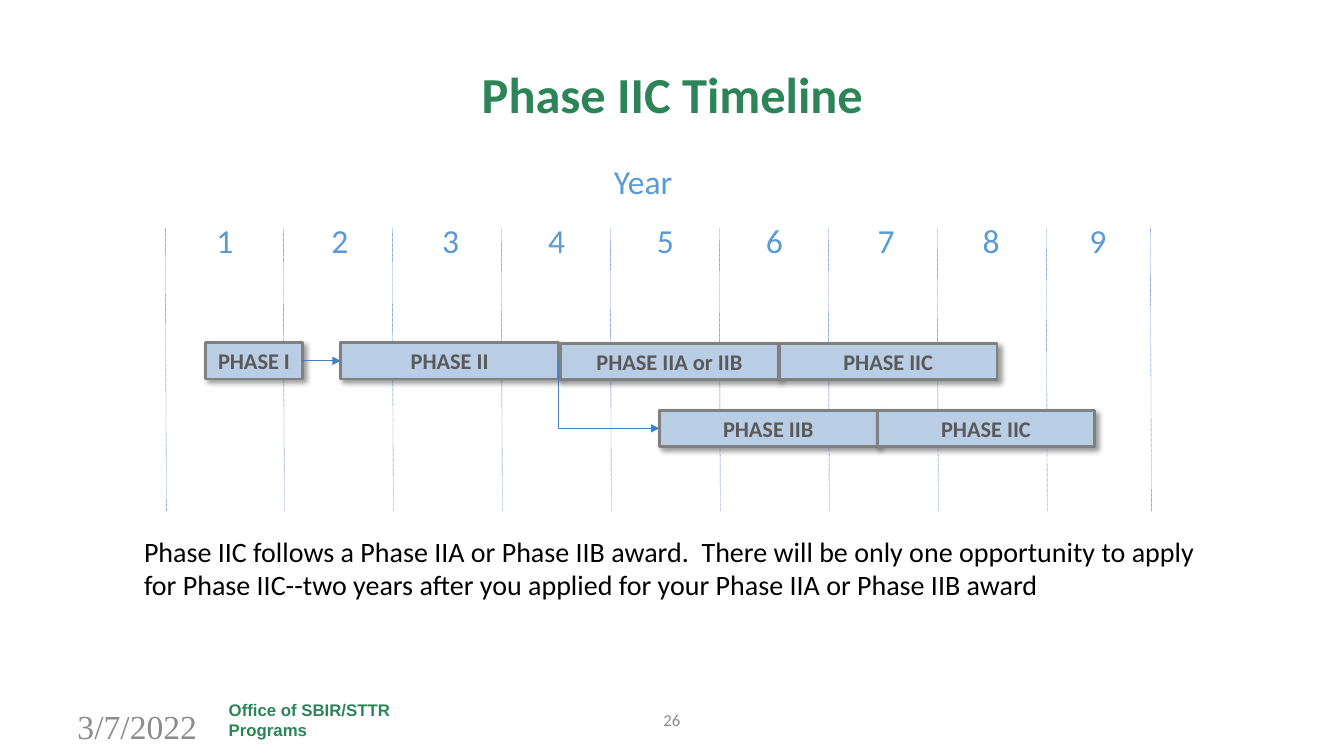
from lxml import etree
from pptx import Presentation
from pptx.dml.color import RGBColor
from pptx.enum import dml, shapes, text
from pptx.oxml import ns, parse_xml
from pptx.util import Inches, Pt

COLORS = {
    "green": "2C8458", "year": "5B9BD5", "line": "4B7EBC", "bar": "B9CDE5",
    "border": "808080", "label": "595959", "footer": "8C8C8C",
    "black": "000000", "white": "FFFFFF",
}
LEFT, CENTER = text.PP_ALIGN.LEFT, text.PP_ALIGN.CENTER
TOP, MIDDLE = text.MSO_ANCHOR.TOP, text.MSO_ANCHOR.MIDDLE
RIGHT_SIDE, LEFT_SIDE = 3, 1
SHADOW = (
    f'<a:effectLst {ns.nsdecls("a")}>'
    '<a:outerShdw blurRad="50800" dist="38100" dir="2700000" algn="tl" rotWithShape="0">'
    f'<a:srgbClr val="{COLORS["black"]}"><a:alpha val="40000"/></a:srgbClr>'
    '</a:outerShdw></a:effectLst>'
)


def color(name):
    """Return the named colour."""
    return RGBColor.from_string(COLORS[name])


def write(shape, words, size, ink, font="Calibri", bold=False, align=LEFT, anchor=TOP):
    """Put one formatted paragraph into a shape."""
    frame = shape.text_frame
    frame.word_wrap = True
    frame.vertical_anchor = anchor
    paragraph = frame.paragraphs[0]
    paragraph.text = words
    paragraph.alignment = align
    paragraph.font.name = font
    paragraph.font.size = Pt(size)
    paragraph.font.bold = bold
    paragraph.font.color.rgb = color(ink)


def add_text(slide, box, words, size, ink, **style):
    """Add a text box at (left, top, width, height) in inches."""
    shape = slide.shapes.add_textbox(*map(Inches, box))
    write(shape, words, size, ink, **style)


def style_line(connector, width):
    """Give a connector its colour and width, without a shadow."""
    connector.line.color.rgb = color("line")
    connector.line.width = Pt(width)
    etree.SubElement(connector._element.spPr, ns.qn("a:effectLst"))


def add_title(slide, box):
    """Format the title placeholder."""
    title = slide.shapes.title
    title.left, title.top, title.width, title.height = map(Inches, box)
    write(title, "Phase IIC Timeline", 36, "green", bold=True, align=CENTER, anchor=MIDDLE)


def add_year_grid(slide, box):
    """Draw the dotted year boundaries with a number in each column."""
    left, top, width, height = box
    offsets = [0] + [1.17 + 1.081 * step for step in range(8)] + [width]
    for offset in offsets:
        start = left + offset
        boundary = slide.shapes.add_connector(
            shapes.MSO_CONNECTOR.STRAIGHT, Inches(start), Inches(top),
            Inches(start + 0.01), Inches(top + height))
        style_line(boundary, 0.25)
        boundary.line.dash_style = dml.MSO_LINE.ROUND_DOT
    label_offsets = [0.14, 1.28, 2.38, 3.43, 4.51, 5.59, 6.7, 7.74, 8.8]
    for year, offset in enumerate(label_offsets, 1):
        add_text(slide, (left + offset, top - 0.13, 0.9, 0.37), str(year), 24, "year", align=CENTER)
    add_text(slide, (left + 4.29, top - 0.71, 0.9, 0.5), "Year", 24, "year", align=CENTER)


def add_bar(slide, left, top, words, width=2.16):
    """Add one shadowed phase bar."""
    bar = slide.shapes.add_shape(
        shapes.MSO_SHAPE.RECTANGLE, *map(Inches, (left, top, width, 0.36)))
    bar.fill.solid()
    bar.fill.fore_color.rgb = color("bar")
    bar.line.color.rgb = color("border")
    bar.line.width = Pt(2)
    bar._element.spPr.append(parse_xml(SHADOW))
    frame = bar.text_frame
    frame.margin_left = frame.margin_right = frame.margin_top = frame.margin_bottom = 0
    write(bar, words, 16, "label", bold=True, align=CENTER, anchor=MIDDLE)
    return bar


def add_arrow(slide, source, target, bend):
    """Join two bars by an elbow arrow that bends at a share of its width."""
    arrow = slide.shapes.add_connector(shapes.MSO_CONNECTOR.ELBOW, 0, 0, 0, 0)
    arrow.begin_connect(source, RIGHT_SIDE)
    arrow.end_connect(target, LEFT_SIDE)
    style_line(arrow, 0.75)
    etree.SubElement(arrow.line._get_or_add_ln(), ns.qn("a:tailEnd"), type="triangle")
    guides = arrow._element.spPr.find(f'{ns.qn("a:prstGeom")}/{ns.qn("a:avLst")}')
    etree.SubElement(guides, ns.qn("a:gd"), name="adj1", fmla=f"val {round(bend * 100000)}")


def add_phases(slide, box):
    """Draw the two rows of phases and the arrows between them."""
    left, top = box[:2]
    lower = top + 0.67
    phase_one = add_bar(slide, left, top, "PHASE I", 0.96)
    phase_two = add_bar(slide, left + 1.34, top, "PHASE II")
    add_arrow(slide, phase_one, phase_two, 0.5)
    phase_two_b = add_bar(slide, left + 4.5, lower, "PHASE IIB")
    add_bar(slide, left + 6.66, lower, "PHASE IIC")
    add_arrow(slide, phase_two, phase_two_b, 0)
    add_bar(slide, left + 3.52, top + 0.01, "PHASE IIA or IIB")
    add_bar(slide, left + 5.69, top + 0.01, "PHASE IIC")


def add_footer(slide, box):
    """Add the date, office name and slide number."""
    left, top = box[:2]
    add_text(slide, (left, top + 0.05, 3.11, 0.4), "3/7/2022", 24, "footer", font="Times New Roman")
    office = slide.shapes.add_shape(
        shapes.MSO_SHAPE.RECTANGLE, *map(Inches, (left + 1.5, top, 2.11, 0.48)))
    office.shadow.inherit = False
    office.fill.solid()
    office.fill.fore_color.rgb = color("white")
    office.line.fill.background()
    write(office, "Office of SBIR/STTR Programs", 12, "green", font="Arial", bold=True, anchor=MIDDLE)
    add_text(slide, (left + 4.44, top + 0.04, 3.11, 0.4), "26", 12, "footer",
             align=CENTER, anchor=MIDDLE)


def main():
    """Build and save the slide."""
    presentation = Presentation()
    presentation.slide_width, presentation.slide_height = Inches(13.33), Inches(7.5)
    slide = presentation.slides.add_slide(presentation.slide_layouts[5])
    add_title(slide, (0.67, 0.3, 12, 1.25))
    add_footer(slide, (0.67, 6.9, 12, 0.48))
    add_year_grid(slide, (1.64, 2.26, 9.77, 2.81))
    add_phases(slide, (2.04, 3.4, 8.82, 1.03))
    add_text(slide, (1.33, 5.25, 10.72, 0.77),
             "Phase IIC follows a Phase IIA or Phase IIB award.  There will be only one "
             "opportunity to apply for Phase IIC--two years after you applied for your "
             "Phase IIA or Phase IIB award", 20, "black")
    presentation.save("out.pptx")


if __name__ == "__main__":
    main()
